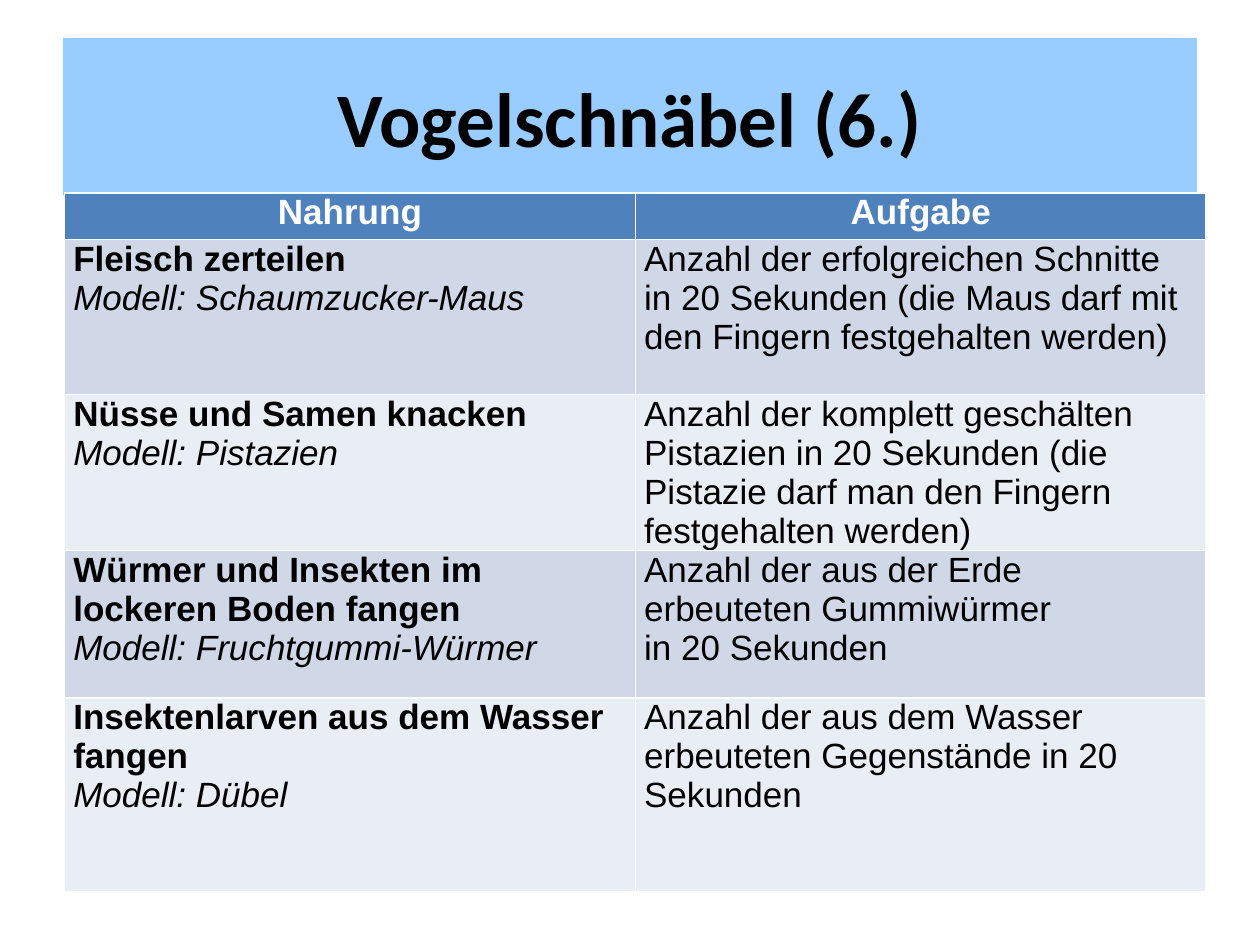
import pptx
import pptx.dml.color
import pptx.enum.shapes
import pptx.enum.text
import pptx.util

Pt = pptx.util.Pt
RGBColor = pptx.dml.color.RGBColor
ALIGN = pptx.enum.text.PP_ALIGN

SKY = RGBColor(0x99, 0xCC, 0xFF)
BLUE = RGBColor(0x4F, 0x81, 0xBD)
BAND_DARK = RGBColor(0xD0, 0xD8, 0xE8)
BAND_LIGHT = RGBColor(0xE9, 0xED, 0xF4)
BLACK = RGBColor(0, 0, 0)
WHITE = RGBColor(0xFF, 0xFF, 0xFF)

# Food with its model, and the task as paragraphs
STATIONS = [
    ("Fleisch zerteilen", "Modell: Schaumzucker-Maus",
     ["Anzahl der erfolgreichen Schnitte in 20 Sekunden "
      "(die Maus darf mit den Fingern festgehalten werden)"]),
    ("Nüsse und Samen knacken", "Modell: Pistazien",
     ["Anzahl der komplett geschälten Pistazien in 20 Sekunden "
      "(die Pistazie darf man den Fingern festgehalten werden)"]),
    ("Würmer und Insekten im lockeren Boden fangen", "Modell: Fruchtgummi-Würmer",
     ["Anzahl der aus der Erde erbeuteten Gummiwürmer", "in 20 Sekunden"]),
    ("Insektenlarven aus dem Wasser fangen", "Modell: Dübel",
     ["Anzahl der aus dem Wasser erbeuteten Gegenstände in 20 Sekunden"]),
]
ROW_HEIGHTS = [26.6, 88.6, 88.6, 84.2, 110.9]
COLUMN_WIDTH = 326.2


def add_span(para, text, size, font, color, bold=False, italic=False):
    span = para.add_run()
    span.text = text
    span.font.size = Pt(size)
    span.font.name = font
    span.font.color.rgb = color
    span.font.bold = bold
    span.font.italic = italic


def fill_cell(cell, lines, fill, color=BLACK, align=ALIGN.LEFT):
    """Write (text, bold, italic) lines as the paragraphs of a cell."""
    cell.fill.solid()
    cell.fill.fore_color.rgb = fill
    cell.margin_left = cell.margin_right = Pt(5)
    cell.margin_top = cell.margin_bottom = 0
    frame = cell.text_frame
    for index, (text, bold, italic) in enumerate(lines):
        para = frame.add_paragraph() if index else frame.paragraphs[0]
        para.alignment = align
        add_span(para, text, 20, "Arial", color, bold, italic)


deck = pptx.Presentation()
deck.slide_width, deck.slide_height = Pt(720), Pt(540)
page = deck.slides.add_slide(deck.slide_layouts[6])

# Title band
box = page.shapes.add_shape(pptx.enum.shapes.MSO_SHAPE.RECTANGLE,
                            Pt(36), Pt(21.6), Pt(648), Pt(90))
box.shadow.inherit = False
box.fill.solid()
box.fill.fore_color.rgb = SKY
box.line.fill.background()
box.text_frame.word_wrap = True
box.text_frame.vertical_anchor = pptx.enum.text.MSO_ANCHOR.MIDDLE
title = box.text_frame.paragraphs[0]
title.alignment = ALIGN.CENTER
add_span(title, "Vogelschnäbel (6.)", 44, "Calibri", BLACK, bold=True)

# Table of stations; its default style draws the white borders
table = page.shapes.add_table(len(ROW_HEIGHTS), 2, Pt(36.9), Pt(110.2),
                              Pt(2 * COLUMN_WIDTH), Pt(sum(ROW_HEIGHTS))).table
for column in table.columns:
    column.width = Pt(COLUMN_WIDTH)
for row, height in zip(table.rows, ROW_HEIGHTS):
    row.height = Pt(height)

# Header row
for index, heading in enumerate(["Nahrung", "Aufgabe"]):
    fill_cell(table.cell(0, index), [(heading, True, False)], BLUE, WHITE, ALIGN.CENTER)

# Station rows in alternating bands
for number, (food, model, tasks) in enumerate(STATIONS, start=1):
    band = BAND_DARK if number % 2 else BAND_LIGHT
    fill_cell(table.cell(number, 0), [(food, True, False), (model, False, True)], band)
    fill_cell(table.cell(number, 1), [(task, False, False) for task in tasks], band)

deck.save("out.pptx")
